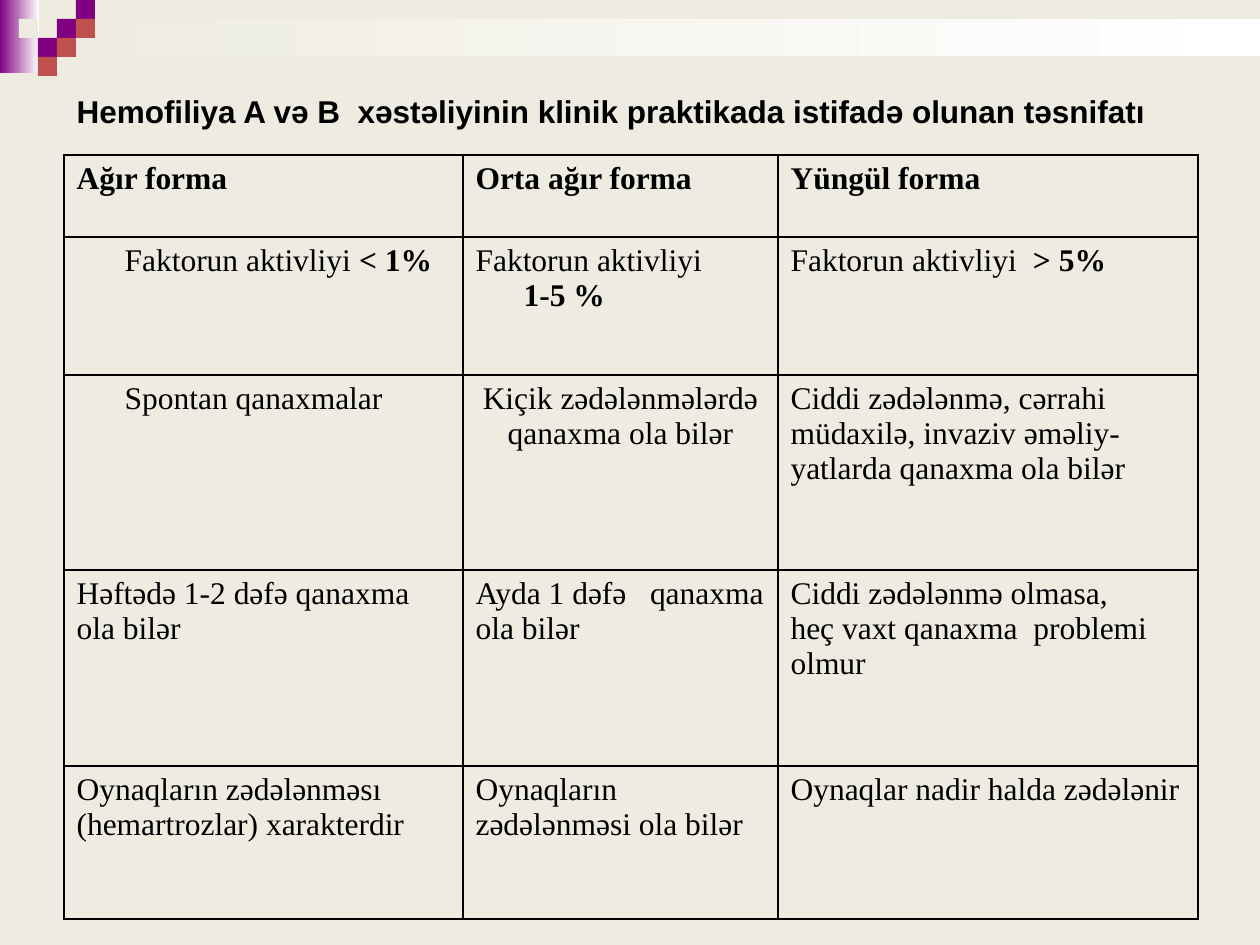
from dataclasses import dataclass

from lxml import etree
from pptx import Presentation
from pptx.dml.color import RGBColor
from pptx.enum.shapes import MSO_SHAPE
from pptx.enum.text import MSO_ANCHOR, MSO_AUTO_SIZE, PP_ALIGN
from pptx.oxml.ns import qn
from pptx.util import Emu, Pt

RECTANGLE = MSO_SHAPE.RECTANGLE
LEFT, CENTER, JUSTIFY = PP_ALIGN.LEFT, PP_ALIGN.CENTER, PP_ALIGN.JUSTIFY
MIDDLE = MSO_ANCHOR.MIDDLE
GROW = MSO_AUTO_SIZE.SHAPE_TO_FIT_TEXT

PX_PER_INCH = 126
TITLE_ONLY = 5
INDENT = 48
SQUARE = 19
PURPLE, RED, CREAM, WHITE, BLACK = "800080", "C0504D", "EEECE1", "FFFFFF", "000000"


def px(length):
    return Emu(round(length * 914400 / PX_PER_INCH))


def color(hex_string):
    return RGBColor.from_string(hex_string)


@dataclass
class Line:
    """One paragraph of a cell: regular text followed by bold text."""
    regular: str = ""
    bold: str = ""
    align: PP_ALIGN = LEFT
    indent: int = 0


class SlideBuilder:
    title_font = "Arial"
    table_font = "Times New Roman"
    text_size = 18
    border_width = 1

    def __init__(self, slide):
        self.slide = slide

    def background(self, fill):
        self.slide.background.fill.solid()
        self.slide.background.fill.fore_color.rgb = color(fill)

    def rectangle(self, left, top, width, height, *colors):
        """One colour gives a solid fill, two a gradient from left to right."""
        shape = self.slide.shapes.add_shape(
            RECTANGLE, px(left), px(top), px(width), px(height))
        shape.shadow.inherit = False
        shape.line.fill.background()
        if len(colors) == 1:
            shape.fill.solid()
            shape.fill.fore_color.rgb = color(colors[0])
            return
        shape.fill.gradient()
        shape.fill.gradient_angle = 0
        for stop, position, value in zip(shape.fill.gradient_stops, (0, 1), colors):
            stop.position = position
            stop.color.rgb = color(value)

    def format_run(self, run, font, bold):
        run.font.name = font
        run.font.size = Pt(self.text_size)
        run.font.bold = bold
        run.font.color.rgb = color(BLACK)

    def title(self, text, left, top, width, height):
        shape = self.slide.shapes.title
        shape.left, shape.top = px(left), px(top)
        shape.width, shape.height = px(width), px(height)
        frame = shape.text_frame
        frame.text = text
        frame.word_wrap = False
        frame.auto_size = GROW
        frame.vertical_anchor = MIDDLE
        paragraph = frame.paragraphs[0]
        paragraph.alignment = JUSTIFY
        self.format_run(paragraph.runs[0], self.title_font, True)

    def table(self, left, top, column_widths, row_heights, rows):
        table = self.slide.shapes.add_table(
            len(rows), len(column_widths), px(left), px(top),
            px(sum(column_widths)), px(sum(row_heights))).table
        table.first_row = table.horz_banding = False
        for column, width in zip(table.columns, column_widths):
            column.width = px(width)
        for row, height, contents in zip(table.rows, row_heights, rows):
            row.height = px(height)
            for cell, lines in zip(row.cells, contents):
                self.fill_cell(cell, lines)

    def fill_cell(self, cell, lines):
        cell.fill.background()
        self.cell_borders(cell)
        frame = cell.text_frame
        for number, line in enumerate(lines):
            paragraph = frame.add_paragraph() if number else frame.paragraphs[0]
            paragraph.alignment = line.align
            if line.indent:
                properties = paragraph._p.get_or_add_pPr()
                properties.set("marL", "0")
                properties.set("indent", str(px(line.indent)))
            for text, bold in ((line.regular, False), (line.bold, True)):
                if text:
                    run = paragraph.add_run()
                    run.text = text
                    self.format_run(run, self.table_font, bold)

    def cell_borders(self, cell):
        properties = cell._tc.get_or_add_tcPr()
        for position, side in enumerate(("lnL", "lnR", "lnT", "lnB")):
            border = etree.Element(qn(f"a:{side}"), w=str(Pt(self.border_width)))
            fill = etree.SubElement(border, qn("a:solidFill"))
            etree.SubElement(fill, qn("a:srgbClr"), val=BLACK)
            properties.insert(position, border)


SQUARES = {  # column and row on the grid of squares
    PURPLE: [(3, 1), (4, 0), (2, 2)],
    RED: [(4, 1), (3, 2), (2, 3)],
    CREAM: [(1, 1)],
}

HEADINGS = ["Ağır forma", "Orta ağır forma", "Yüngül forma"]
ROWS = [
    [[Line(bold=heading, align=JUSTIFY)] for heading in HEADINGS],
    [
        [Line("Faktorun aktivliyi ", "< 1%", indent=INDENT)],
        [Line("Faktorun aktivliyi", align=JUSTIFY),
         Line(bold="1-5 %", align=JUSTIFY, indent=INDENT)],
        [Line("Faktorun aktivliyi  ", "> 5%")],
    ],
    [
        [Line("Spontan qanaxmalar", indent=INDENT)],
        [Line("Kiçik zədələnmələrdə qanaxma ola bilər", align=CENTER)],
        [Line("Ciddi zədələnmə, cərrahi  müdaxilə, invaziv əməliy-"),
         Line("yatlarda qanaxma ola bilər")],
    ],
    [
        [Line("Həftədə 1-2 dəfə qanaxma", align=JUSTIFY),
         Line("ola bilər", align=JUSTIFY)],
        [Line("Ayda 1 dəfə   qanaxma ola bilər")],
        [Line("Ciddi zədələnmə olmasa,"),
         Line("heç vaxt qanaxma  problemi olmur")],
    ],
    [
        [Line("Oynaqların zədələnməsı", align=JUSTIFY),
         Line("(hemartrozlar) xarakterdir", align=JUSTIFY)],
        [Line("Oynaqların zədələnməsi ola bilər")],
        [Line("Oynaqlar nadir halda zədələnir")],
    ],
]


def main():
    presentation = Presentation()
    presentation.slide_width, presentation.slide_height = px(1260), px(945)
    layout = presentation.slide_layouts[TITLE_ONLY]
    builder = SlideBuilder(presentation.slides.add_slide(layout))

    builder.background(CREAM)
    builder.rectangle(0, 0, 39, 73, PURPLE, WHITE)
    builder.rectangle(57, 19, 1203, 37, CREAM, WHITE)
    for fill, places in SQUARES.items():
        for column, row in places:
            builder.rectangle(column * SQUARE, row * SQUARE, SQUARE, SQUARE, fill)

    builder.title(
        "Hemofiliya A və B  xəstəliyinin klinik praktikada istifadə olunan təsnifatı",
        64, 86, 1096, 50)
    builder.table(64, 155, [399, 315, 420], [82, 138, 195, 196, 153], ROWS)
    presentation.save("out.pptx")


if __name__ == "__main__":
    main()
